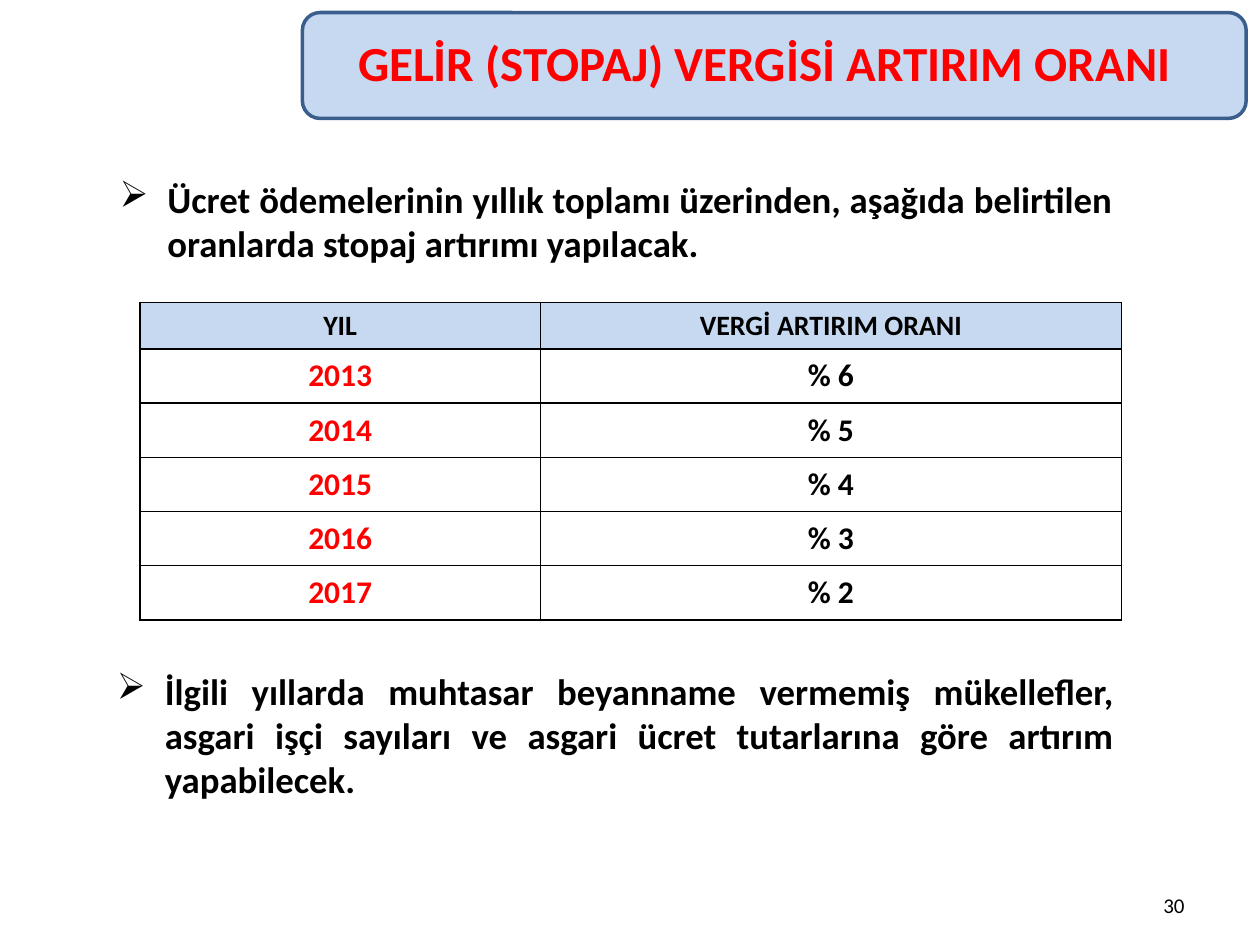
import pptx
import pptx.util
import pptx.dml.color
import pptx.enum.shapes
import pptx.enum.text
import pptx.oxml
import pptx.oxml.ns
from pptx.util import Inches

ALIGN = pptx.enum.text.PP_ALIGN
ANCHOR = pptx.enum.text.MSO_ANCHOR
BLACK, RED, PALE_BLUE = "000000", "FF0000", "C6D9F1"
NAMESPACE = pptx.oxml.ns.nsdecls("a")


def color(value):
    return pptx.dml.color.RGBColor.from_string(value)


def style(paragraph, size, text_color, alignment, bold=True):
    paragraph.alignment = alignment
    for run in paragraph.runs:
        run.font.name = "Calibri"
        run.font.size = pptx.util.Pt(size)
        run.font.bold = bold
        run.font.color.rgb = color(text_color)


presentation = pptx.Presentation()
presentation.slide_width, presentation.slide_height = Inches(10), Inches(7.5)
slide = presentation.slides.add_slide(presentation.slide_layouts[5])

# Title on its banner
banner = slide.shapes.add_shape(
    pptx.enum.shapes.MSO_SHAPE.ROUNDED_RECTANGLE,
    Inches(2.4), Inches(0.1), Inches(7.49), Inches(0.84))
banner.shadow.inherit = False
banner.fill.solid()
banner.fill.fore_color.rgb = color(PALE_BLUE)
banner.line.color.rgb = color("3A5F8C")
banner.line.width = pptx.util.Pt(2)

title = slide.shapes.title
title.element.addprevious(banner.element)
title.left, title.top = Inches(2.48), Inches(0.21)
title.width, title.height = Inches(7.17), Inches(0.57)
title.text_frame.text = "GELİR (STOPAJ) VERGİSİ ARTIRIM ORANI"
title.text_frame.vertical_anchor = ANCHOR.TOP
style(title.text_frame.paragraphs[0], 28, RED, ALIGN.CENTER)

# Slide number
number = slide.shapes.add_textbox(Inches(7.17), Inches(6.83), Inches(2.33), Inches(0.5))
number.text_frame.word_wrap = True
number.text_frame.text = "30"
number.text_frame.vertical_anchor = ANCHOR.BOTTOM
style(number.text_frame.paragraphs[0], 12, BLACK, ALIGN.RIGHT, bold=False)

# Rate table
rows = [("YIL", "VERGİ ARTIRIM ORANI"), ("2013", "% 6"), ("2014", "% 5"),
        ("2015", "% 4"), ("2016", "% 3"), ("2017", "% 2")]
table = slide.shapes.add_table(
    len(rows), 2, Inches(1.11), Inches(2.4), Inches(7.79), Inches(2.53)).table
table.first_row = table.horz_banding = False
table.columns[0].width, table.columns[1].width = Inches(3.18), Inches(4.61)
for row_index, texts in enumerate(rows):
    header = row_index == 0
    table.rows[row_index].height = Inches(0.37 if header else 0.43)
    for column_index, text in enumerate(texts):
        cell = table.cell(row_index, column_index)
        cell.text_frame.text = text
        cell.vertical_anchor = ANCHOR.MIDDLE
        text_color = RED if column_index == 0 and not header else BLACK
        style(cell.text_frame.paragraphs[0], 16 if header else 18, text_color, ALIGN.CENTER)
        properties = cell._tc.get_or_add_tcPr()
        for side in ("lnL", "lnR", "lnT", "lnB"):
            properties.append(pptx.oxml.parse_xml(
                f'<a:{side} {NAMESPACE} w="12700"><a:solidFill>'
                f'<a:srgbClr val="{BLACK}"/></a:solidFill></a:{side}>'))
        if header:
            cell.fill.solid()
            cell.fill.fore_color.rgb = color(PALE_BLUE)
        else:
            cell.fill.background()

# Bulleted statements above and below the table
statements = [
    (0.85, 1.33, 8.08, 0.85, "Ücret ödemelerinin yıllık toplamı üzerinden, aşağıda "
     "belirtilen oranlarda stopaj artırımı yapılacak."),
    (0.83, 5.25, 8.11, 1.16, "İlgili yıllarda muhtasar beyanname vermemiş mükellefler, "
     "asgari işçi sayıları ve asgari ücret tutarlarına göre artırım yapabilecek."),
]
for left, top, width, height, text in statements:
    statement = slide.shapes.add_textbox(
        Inches(left), Inches(top), Inches(width), Inches(height))
    statement.text_frame.word_wrap = True
    statement.text_frame.vertical_anchor = ANCHOR.MIDDLE
    statement.text_frame.text = text
    paragraph = statement.text_frame.paragraphs[0]
    properties = paragraph._p.get_or_add_pPr()
    properties.set("marL", str(Inches(0.38)))
    properties.set("indent", str(Inches(-0.38)))
    properties.append(pptx.oxml.parse_xml(f'<a:buChar {NAMESPACE} char="➢"/>'))
    style(paragraph, 21, BLACK, ALIGN.JUSTIFY)

presentation.save("out.pptx")
